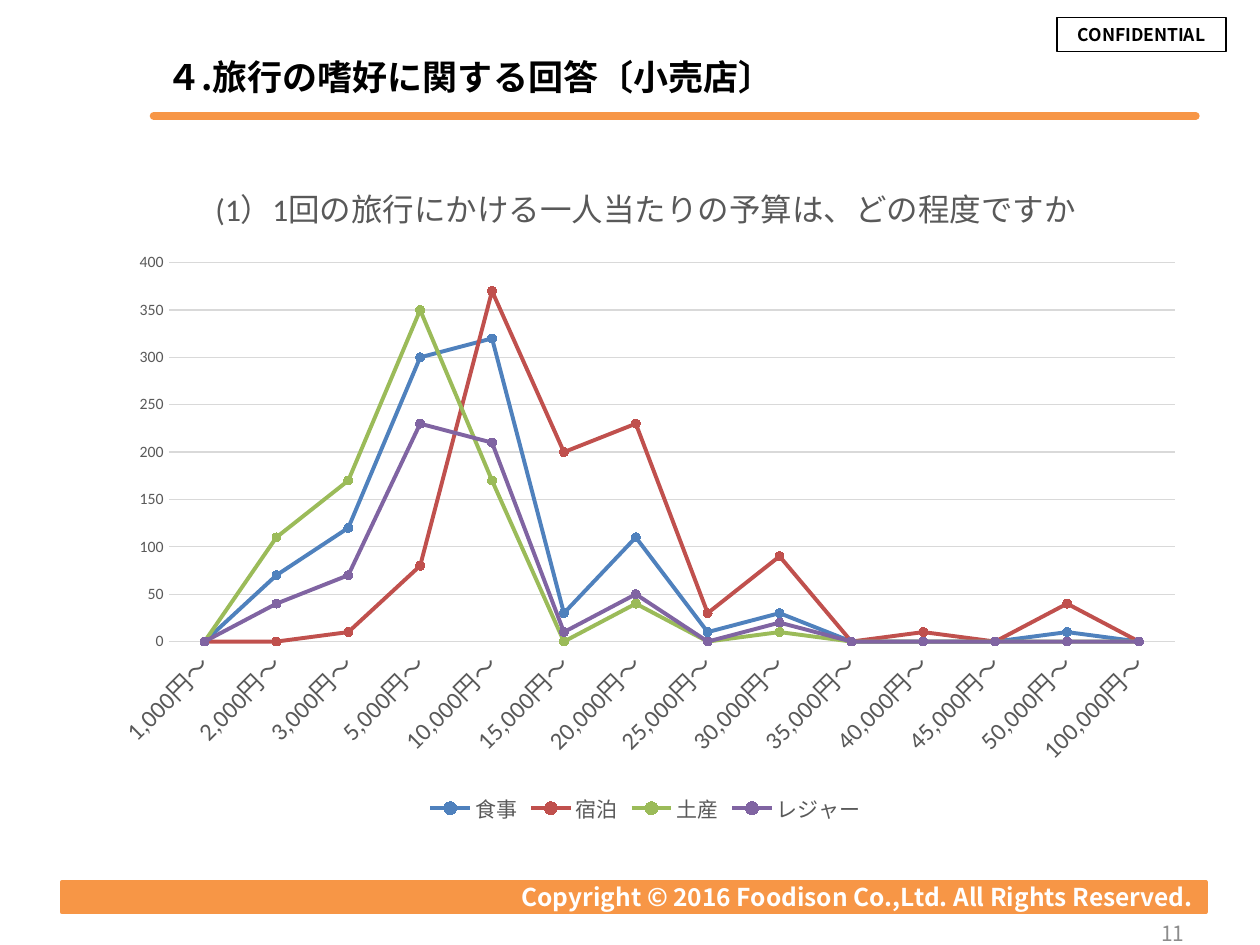
from lxml import etree
from pptx import Presentation
from pptx.chart.data import CategoryChartData
from pptx.dml.color import RGBColor
from pptx.enum.chart import XL_CHART_TYPE, XL_LEGEND_POSITION, XL_MARKER_STYLE, XL_TICK_MARK
from pptx.enum.shapes import MSO_CONNECTOR, MSO_SHAPE
from pptx.enum.text import MSO_ANCHOR, MSO_AUTO_SIZE, PP_ALIGN
from pptx.oxml.ns import qn
from pptx.util import Inches, Pt

LEFT, MID, RIGHT = PP_ALIGN.LEFT, PP_ALIGN.CENTER, PP_ALIGN.RIGHT
TOP, CENTER = MSO_ANCHOR.TOP, MSO_ANCHOR.MIDDLE
NO_TICK = XL_TICK_MARK.NONE
CIRCLE = XL_MARKER_STYLE.CIRCLE
SANS = "Noto Sans CJK JP"
COLORS = {
    "orange": "F79646", "black": "000000", "white": "FFFFFF",
    "text": "595959", "grid": "D9D9D9", "page": "8C8C8C",
    "食事": "4F81BD", "宿泊": "C0504D", "土産": "9BBB59", "レジャー": "8064A2",
}


def rgb(name):
    return RGBColor.from_string(COLORS[name])


def write(shape, text, size, color, align, anchor=CENTER, bold=True):
    frame = shape.text_frame
    frame.word_wrap = True
    frame.vertical_anchor = anchor
    para = frame.paragraphs[0]
    para.alignment = align
    run = para.add_run()
    run.text = text
    font = run.font
    font.size, font.bold, font.name = Pt(size), bold, SANS
    font.color.rgb = rgb(color)
    etree.SubElement(run._r.get_or_add_rPr(), qn("a:ea")).set("typeface", SANS)


deck = Presentation()
deck.slide_width, deck.slide_height = Inches(10), Inches(7.5)
slide = deck.slides.add_slide(deck.slide_layouts[6])
shapes = slide.shapes

# Rule under the title
rule = shapes.add_connector(MSO_CONNECTOR.STRAIGHT, Inches(1.22), Inches(0.92),
                            Inches(9.49), Inches(0.92))
rule.line.color.rgb = rgb("orange")
rule.line.width = Pt(4.5)
rule.line._get_or_add_ln().set("cap", "rnd")
etree.SubElement(rule._element.spPr, qn("a:effectLst"))

# Footer bar
bar = shapes.add_shape(MSO_SHAPE.RECTANGLE, Inches(0.49), Inches(7), Inches(9.08), Inches(0.24))
bar.shadow.inherit = False
bar.fill.solid()
bar.fill.fore_color.rgb = rgb("orange")
bar.line.color.rgb = rgb("orange")
bar.line.width = Pt(2)
write(bar, "Copyright © 2016 Foodison Co.,Ltd. All Rights Reserved.", 14, "white", RIGHT)

# Confidential stamp
stamp = shapes.add_shape(MSO_SHAPE.RECTANGLE, Inches(8.39), Inches(0.14),
                         Inches(1.34), Inches(0.27))
stamp.shadow.inherit = False
stamp.fill.background()
stamp.line.color.rgb = rgb("black")
stamp.line.width = Pt(0.75)
write(stamp, "CONFIDENTIAL", 10, "black", MID, TOP)
stamp.text_frame.auto_size = MSO_AUTO_SIZE.SHAPE_TO_FIT_TEXT

# Title and page number
title = shapes.add_textbox(Inches(1.22), Inches(0.3), Inches(8.28), Inches(0.61))
write(title, "４.旅行の嗜好に関する回答〔小売店〕", 20, "black", LEFT)
page = shapes.add_textbox(Inches(7.17), Inches(7.21), Inches(2.33), Inches(0.4))
write(page, "11", 12, "page", RIGHT, bold=False)

# Chart data
YEN = '#,##0"円～"'
data = CategoryChartData(number_format="General")
data.categories = [1000, 2000, 3000, 5000, 10000, 15000, 20000, 25000,
                   30000, 35000, 40000, 45000, 50000, 100000]
data.categories.number_format = YEN
data.add_series("食事", [0, 70, 120, 300, 320, 30, 110, 10, 30, 0, 0, 0, 10, 0])
data.add_series("宿泊", [0, 0, 10, 80, 370, 200, 230, 30, 90, 0, 10, 0, 40, 0])
data.add_series("土産", [0, 110, 170, 350, 170, 0, 40, 0, 10, 0, 0, 0, 0, 0])
data.add_series("レジャー", [0, 40, 70, 230, 210, 10, 50, 0, 20, 0, 0, 0, 0, 0])
chart = shapes.add_chart(XL_CHART_TYPE.LINE_MARKERS, Inches(0.75), Inches(1.23),
                         Inches(8.75), Inches(5.35), data).chart
chart.font.size, chart.font.name = Pt(10), "Calibri"
chart.font.color.rgb = rgb("black")

# Chart title
head = chart.chart_title.text_frame.paragraphs[0].add_run()
head.text = "(1）1回の旅行にかける一人当たりの予算は、どの程度ですか"
chart.chart_title.include_in_layout = False

# Legend
chart.has_legend = True
chart.legend.position = XL_LEGEND_POSITION.BOTTOM
chart.legend.include_in_layout = False

# Axes
cat, val = chart.category_axis, chart.value_axis
for axis in (cat, val):
    axis.major_tick_mark = axis.minor_tick_mark = NO_TICK
cat.tick_labels.number_format = YEN
cat.tick_labels.number_format_is_linked = False
cat.format.line.color.rgb = rgb("grid")
cat.format.line.width = Pt(0.75)
val.minimum_scale, val.maximum_scale, val.major_unit = 0, 400, 50
val.format.line.fill.background()
val.has_major_gridlines = True
val.major_gridlines.format.line.color.rgb = rgb("grid")
val.major_gridlines.format.line.width = Pt(0.75)

# Chart fonts
for font, size in ((head.font, 18), (chart.legend.font, 12),
                   (cat.tick_labels.font, 14), (val.tick_labels.font, 9)):
    font.size, font.name, font.bold = Pt(size), "Calibri", False
    font.color.rgb = rgb("text")
cat._element.find(qn("c:txPr")).find(qn("a:bodyPr")).set("rot", "-2700000")

# Series
plot = chart.plots[0]
plot.vary_by_categories = False
for line in plot.series:
    color = rgb(line.name)
    line.smooth = False
    line.format.line.color.rgb = color
    line.format.line.width = Pt(2.25)
    mark = line.marker
    mark.style, mark.size = CIRCLE, 5
    mark.format.fill.solid()
    mark.format.fill.fore_color.rgb = color
    mark.format.line.color.rgb = color

deck.save("out.pptx")
